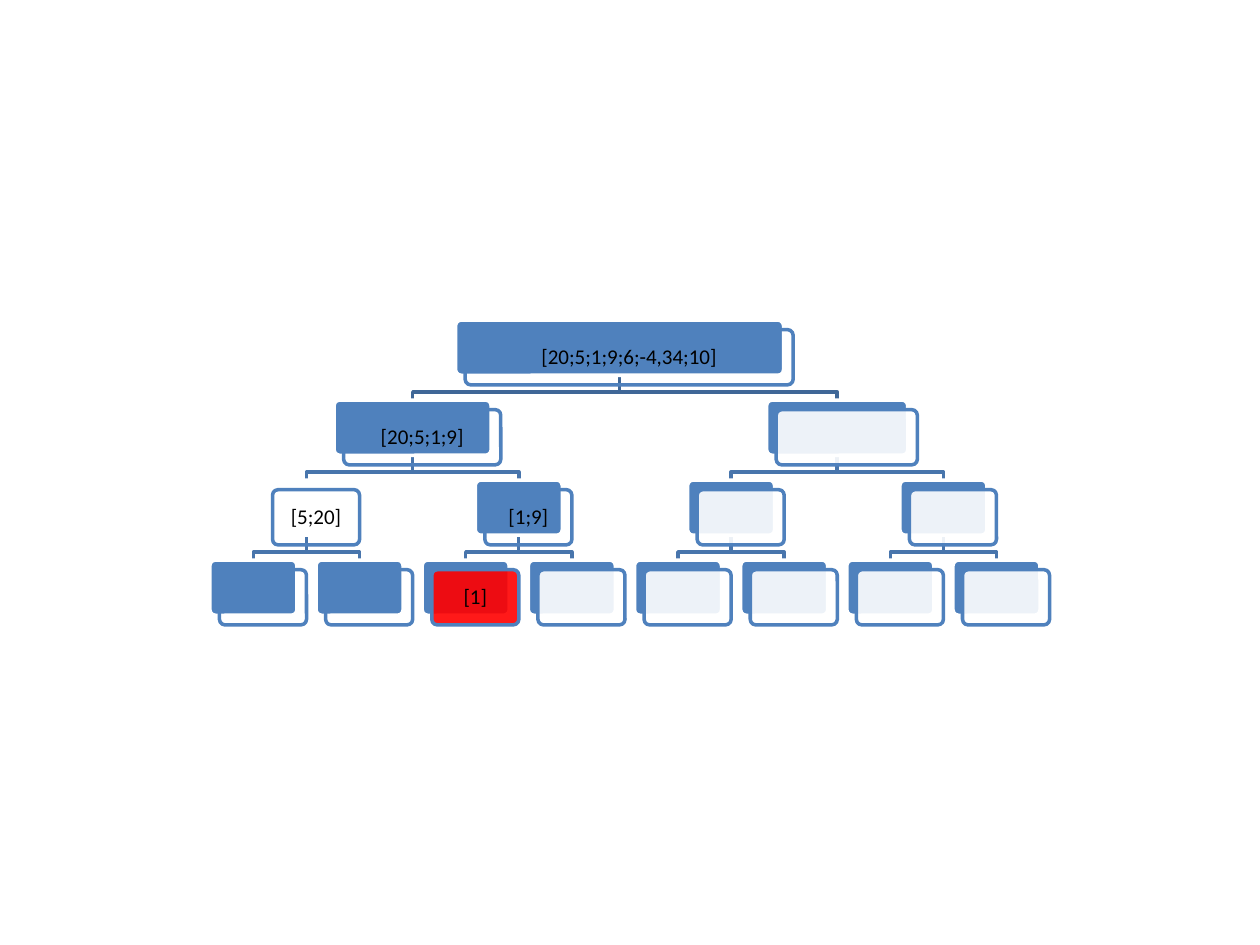
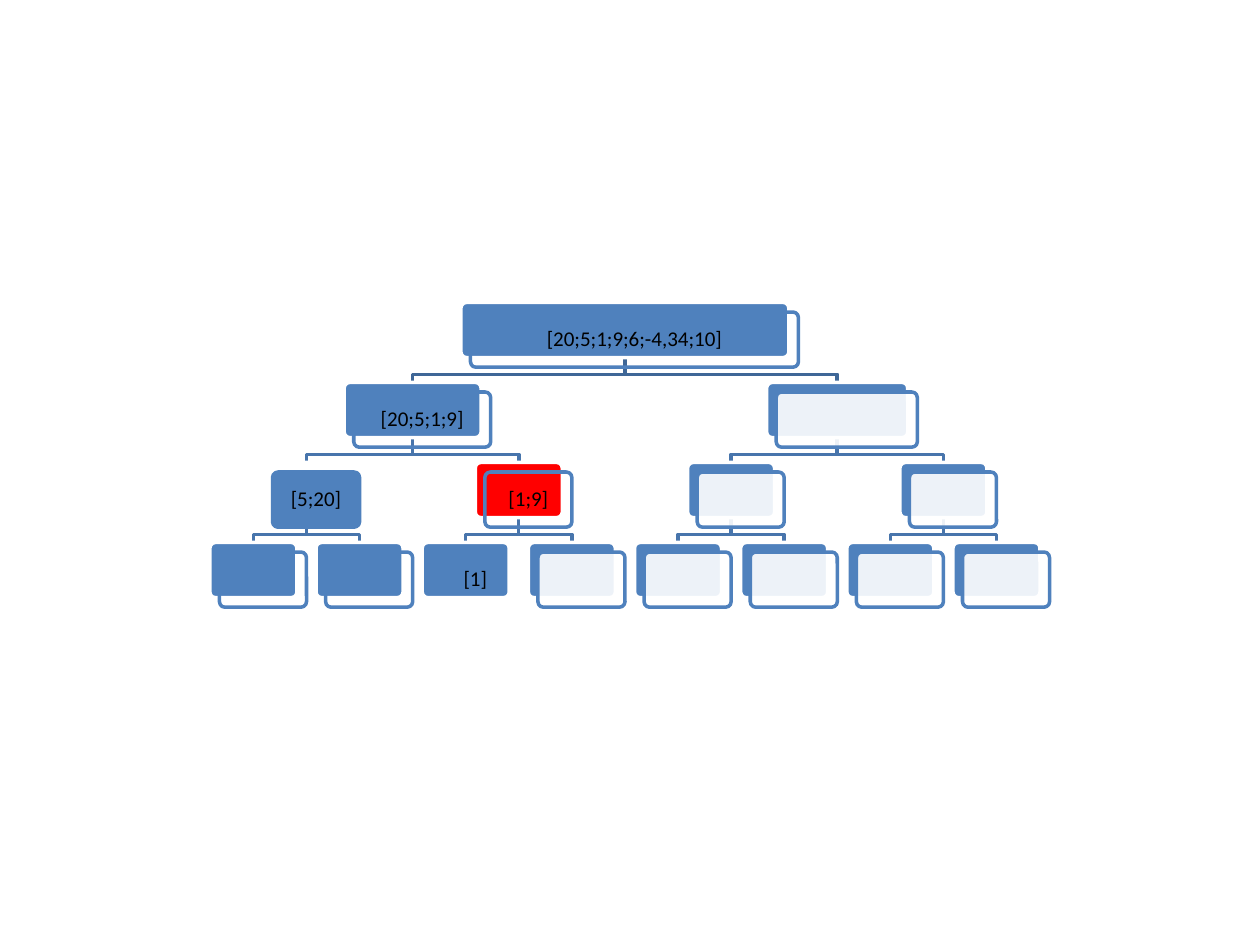
from dataclasses import dataclass
from typing import Optional

from lxml.etree import SubElement
from pptx import Presentation
from pptx.dml.color import RGBColor
from pptx.enum.shapes import MSO_SHAPE as SHAPE
from pptx.enum.text import MSO_ANCHOR as ANCHOR, PP_ALIGN as ALIGN
from pptx.oxml.ns import qn
from pptx.util import Inches, Pt

BLUE, RED, WHITE, BLACK = "4F81BD", "FF0000", "FFFFFF", "000000"
ROOT_BRANCH, LOWER_BRANCH = "3F6797", "4875AC"
FONT = "Calibri"
LINE_WIDTH = Pt(2)

LEVELS = 4
LEAVES = 2 ** (LEVELS - 1)
BOX_LEFT, BOX_WIDTH, BOX_HEIGHT = 1.59, 6.74, 2.54

# Shares of one leaf column (widths) and of one level row (heights)
CARD_WIDTH, CARD_HEIGHT = 0.82, 0.69
FRONT_RIGHT, FRONT_DOWN = 0.09, 0.12
BRANCH_BEND = 0.9


@dataclass
class Card:
    """One tree node: a back plate with a front plate shifted over it."""
    text: str = ""
    width: float = CARD_WIDTH
    back: Optional[str] = BLUE
    front: Optional[str] = WHITE
    front_opacity: int = 90
    outline: Optional[str] = BLUE
    shift: float = 0


def rgb(hex_string):
    return RGBColor.from_string(hex_string)


def style(shape, fill, line, opacity=100):
    shape.shadow.inherit = False
    if fill:
        shape.fill.solid()
        shape.fill.fore_color.rgb = rgb(fill)
        if opacity < 100:
            color = shape.fill._xPr.find(qn("a:solidFill"))[0]
            SubElement(color, qn("a:alpha"), val=str(opacity * 1000))
    else:
        shape.fill.background()
    if line:
        shape.line.color.rgb = rgb(line)
        shape.line.width = LINE_WIDTH
    else:
        shape.line.fill.background()


def add_plate(slide, left, top, width, height, fill, line, opacity=100):
    plate = slide.shapes.add_shape(SHAPE.ROUNDED_RECTANGLE, Inches(left),
                                   Inches(top), Inches(width), Inches(height))
    plate.adjustments[0] = 0.1
    style(plate, fill, line, opacity)
    return plate


def write_label(plate, text):
    frame = plate.text_frame
    frame.margin_left = frame.margin_right = Inches(0.05)
    frame.margin_top = frame.margin_bottom = Inches(0.05)
    frame.vertical_anchor = ANCHOR.MIDDLE
    frame.text = text
    paragraph = frame.paragraphs[0]
    paragraph.alignment = ALIGN.CENTER
    paragraph.line_spacing = 0.9
    font = paragraph.runs[0].font
    font.name, font.size, font.color.rgb = FONT, Pt(12), rgb(BLACK)


def add_branch(slide, start_x, end_x, top, bend, bottom, color):
    points = [(start_x, top), (start_x, bend), (end_x, bend), (end_x, bottom)]
    points = [(Inches(x), Inches(y)) for x, y in points]
    builder = slide.shapes.build_freeform(*points[0])
    builder.add_line_segments(points[1:], close=False)
    style(builder.convert_to_shape(), None, color)


def add_card(slide, card, center, top, column, row):
    width, height = card.width * column, CARD_HEIGHT * row
    left = center - width / 2
    add_plate(slide, left, top, width, height, card.back, WHITE)
    front = add_plate(slide, left + FRONT_RIGHT * column,
                      top + FRONT_DOWN * row, width, height,
                      card.front, card.outline, card.front_opacity)
    if card.text:
        write_label(front, card.text)


def add_tree(slide, left, top, width, height, cards):
    """Draw a full binary tree whose cards are listed level by level."""
    column, row = width / LEAVES, height / LEVELS
    places = []
    for index, card in enumerate(cards):
        level = (index + 1).bit_length() - 1
        position = index + 1 - 2 ** level
        center = left + (position + 0.5) * width / 2 ** level
        places.append((center + card.shift * column, top + level * row))

    for child in range(1, len(cards)):
        parent = (child - 1) // 2
        start_x, parent_top = places[parent]
        end_x, child_top = places[child]
        add_branch(slide, start_x, end_x, parent_top + CARD_HEIGHT * row,
                   parent_top + BRANCH_BEND * row, child_top,
                   LOWER_BRANCH if parent else ROOT_BRANCH)

    for card, (center, card_top) in zip(cards, places):
        add_card(slide, card, center, card_top, column, row)


def sort_step(root_shift, left_width, sorted_front, pair_back, single):
    """List the cards of one step; the arguments are what differs."""
    return [
        Card("[20;5;1;9;6;-4,34;10]", 3.09, front=None, shift=root_shift),
        Card("[20;5;1;9]", left_width, front=None),
        Card(width=1.33),
        Card("[5;20]", back=None, front=sorted_front, front_opacity=100),
        Card("[1;9]", back=pair_back, front=None),
        Card(), Card(),
        Card(front=None), Card(front=None),
        single,
        *[Card() for _ in range(5)],
    ]


def main():
    prs = Presentation()
    prs.slide_width, prs.slide_height = Inches(10), Inches(7.5)
    steps = [
        (2.54, sort_step(-0.05, 1.48, None, BLUE, Card("[1]", front=RED))),
        (2.4, sort_step(0, 1.29, BLUE, RED,
                        Card("[1]", front=None, outline=None))),
    ]
    for top, cards in steps:
        slide = prs.slides.add_slide(prs.slide_layouts[6])
        add_tree(slide, BOX_LEFT, top, BOX_WIDTH, BOX_HEIGHT, cards)
    prs.save("out.pptx")


if __name__ == "__main__":
    main()
